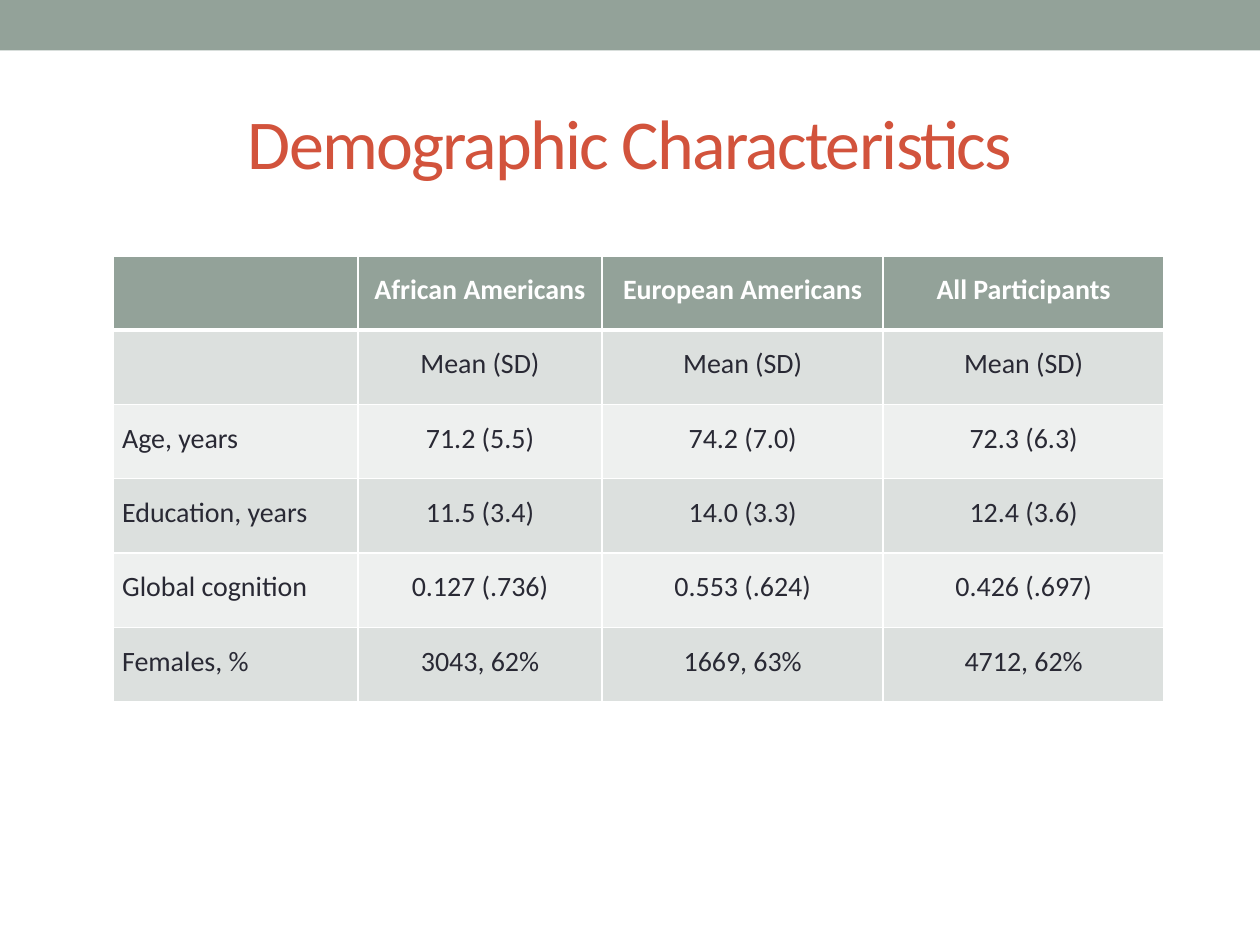
from dataclasses import dataclass

from lxml import etree
from pptx import Presentation
from pptx.dml.color import RGBColor
from pptx.enum.shapes import MSO_SHAPE
from pptx.enum.text import MSO_ANCHOR, PP_ALIGN
from pptx.oxml.ns import qn
from pptx.util import Inches, Pt

RECTANGLE = MSO_SHAPE.RECTANGLE
TOP, MIDDLE = MSO_ANCHOR.TOP, MSO_ANCHOR.MIDDLE
LEFT, CENTER = PP_ALIGN.LEFT, PP_ALIGN.CENTER


@dataclass(frozen=True)
class Theme:
    font: str = "Calibri"
    sage: str = "93A299"
    title: str = "D2533C"
    ink: str = "292934"
    white: str = "FFFFFF"
    bands: tuple[str, str] = ("DCE0DE", "EEF0EF")
    title_size: float = 40
    table_size: float = 16
    rule: float = 1
    header_rule: float = 3


@dataclass(frozen=True)
class RowStyle:
    fill: str
    color: str
    bold: bool
    top_rule: float
    bottom_rule: float


THEME = Theme()
COLUMN_WIDTHS = (1.94, 1.94, 2.23, 2.23)
ROW_HEIGHT = 0.59
DEMOGRAPHICS = (
    ("", "African Americans", "European Americans", "All Participants"),
    ("", "Mean (SD)", "Mean (SD)", "Mean (SD)"),
    ("Age, years", "71.2 (5.5)", "74.2 (7.0)", "72.3 (6.3)"),
    ("Education, years", "11.5 (3.4)", "14.0 (3.3)", "12.4 (3.6)"),
    ("Global cognition", "0.127 (.736)", "0.553 (.624)", "0.426 (.697)"),
    ("Females, %", "3043, 62%", "1669, 63%", "4712, 62%"),
)


def apply_format(target, values: dict) -> None:
    for attribute, value in values.items():
        setattr(target, attribute, value)


def paint(fill, color: str) -> None:
    fill.solid()
    fill.fore_color.rgb = RGBColor.from_string(color)


def style_font(font, size: float, color: str, bold: bool = False) -> None:
    apply_format(font, {"name": THEME.font, "size": Pt(size), "bold": bold})
    font.color.rgb = RGBColor.from_string(color)


def add_band(slide) -> None:
    band = slide.shapes.add_shape(RECTANGLE, 0, 0, Inches(10), Inches(0.4))
    band.shadow.inherit = False
    paint(band.fill, THEME.sage)
    band.line.fill.background()


def add_title(slide, text: str) -> None:
    title = slide.shapes.add_textbox(Inches(0.5), Inches(0.58), Inches(9), Inches(1.08))
    frame = title.text_frame
    apply_format(frame, {"word_wrap": True, "vertical_anchor": MIDDLE})
    paragraph = frame.paragraphs[0]
    paragraph.alignment = CENTER
    run = paragraph.add_run()
    run.text = text
    style_font(run.font, THEME.title_size, THEME.title)
    run.font._element.set("spc", "-100")


def add_borders(cell, style: RowStyle) -> None:
    properties = cell._tc.get_or_add_tcPr()
    widths = {"lnL": THEME.rule, "lnR": THEME.rule,
              "lnT": style.top_rule, "lnB": style.bottom_rule}
    for side, width in widths.items():
        border = etree.SubElement(properties, qn(f"a:{side}"), w=str(Pt(width)))
        fill = etree.SubElement(border, qn("a:solidFill"))
        etree.SubElement(fill, qn("a:srgbClr"), val=THEME.white)


def row_style(index: int) -> RowStyle:
    if index == 0:
        return RowStyle(THEME.sage, THEME.white, True, THEME.rule, THEME.header_rule)
    top_rule = THEME.header_rule if index == 1 else THEME.rule
    return RowStyle(THEME.bands[(index - 1) % 2], THEME.ink, False, top_rule, THEME.rule)


def fill_cell(cell, text: str, alignment, style: RowStyle) -> None:
    add_borders(cell, style)
    paint(cell.fill, style.fill)
    apply_format(cell, {
        "text": text, "vertical_anchor": TOP,
        "margin_left": Inches(0.07), "margin_right": Inches(0.07),
        "margin_top": 0, "margin_bottom": 0,
    })
    paragraph = cell.text_frame.paragraphs[0]
    apply_format(paragraph, {"alignment": alignment, "line_spacing": 1.5})
    fonts = [run.font for run in paragraph.runs] or [paragraph.font]
    for font in fonts:
        style_font(font, THEME.table_size, style.color, style.bold)


def add_demographics(slide) -> None:
    table = slide.shapes.add_table(
        len(DEMOGRAPHICS), len(COLUMN_WIDTHS), Inches(0.9), Inches(2.03),
        Inches(sum(COLUMN_WIDTHS)), Inches(ROW_HEIGHT * len(DEMOGRAPHICS)),
    ).table
    for column, width in zip(table.columns, COLUMN_WIDTHS):
        column.width = Inches(width)
    for row_index, values in enumerate(DEMOGRAPHICS):
        table.rows[row_index].height = Inches(ROW_HEIGHT)
        style = row_style(row_index)
        for column_index, value in enumerate(values):
            alignment = CENTER if column_index else LEFT
            fill_cell(table.cell(row_index, column_index), value, alignment, style)


def main() -> None:
    """Build the demographic characteristics slide."""
    presentation = Presentation()
    apply_format(presentation, {"slide_width": Inches(10), "slide_height": Inches(7.5)})
    slide = presentation.slides.add_slide(presentation.slide_layouts[6])
    paint(slide.background.fill, THEME.white)
    add_band(slide)
    add_title(slide, "Demographic Characteristics")
    add_demographics(slide)
    presentation.save("out.pptx")


if __name__ == "__main__":
    main()
